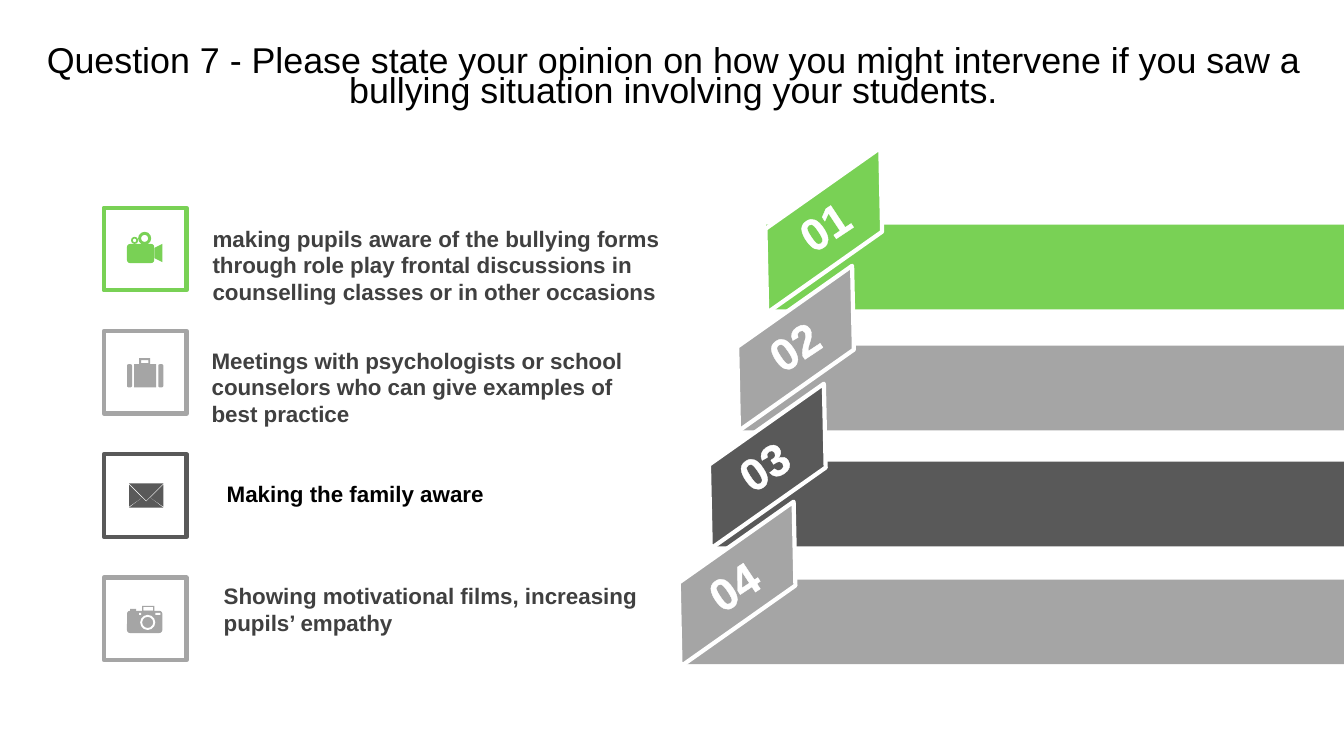
from collections import namedtuple

from lxml.etree import SubElement
from pptx import Presentation
from pptx.dml.color import RGBColor
from pptx.enum.shapes import MSO_SHAPE as Shape
from pptx.enum.text import MSO_ANCHOR as Anchor, PP_ALIGN as Align
from pptx.oxml.ns import qn
from pptx.util import Inches, Pt

Box = namedtuple("Box", "left top width height")
Answer = namedtuple("Answer", "wording color text_color text_box wraps bar_left bar_top tag_left icon")

WIDTH, HEIGHT = 13.33, 7.5
GREEN, GRAY, DARK, WHITE, BLACK, INK = "79D155", "A5A5A5", "595959", "FFFFFF", "000000", "404040"
ICON_GRID = 82

QUESTION = ("Question 7 - Please state your opinion on how you might intervene "
            "if you saw a bullying situation involving your students.")
ANSWERS = [
    Answer("making pupils aware of the bullying forms through role play frontal discussions "
           "in counselling classes or in other occasions",
           GREEN, INK, Box(2.01, 2.18, 5.19, 0.91), True, 7.6, 2.23, 7.24, "film"),
    Answer("Meetings with psychologists or school counselors who can give examples of best practice",
           GRAY, INK, Box(2, 3.39, 4.48, 0.91), True, 7.32, 3.43, 6.96, "suitcase"),
    Answer("Making the family aware",
           DARK, BLACK, Box(2.15, 4.71, 2.79, 0.37), False, 7.06, 4.58, 6.68, "envelope"),
    Answer("Showing motivational films, increasing pupils’ empathy",
           GRAY, INK, Box(2.12, 5.73, 4.48, 0.64), True, 6.75, 5.75, 6.38, "camera"),
]

ICON_PARTS = {
    "film": [(Shape.ROUNDED_RECTANGLE, (23, 36, 27, 19), 0.16, False),
             (Shape.DONUT, (34, 24, 13, 13), 0.23, False),
             (Shape.DONUT, (27, 29, 7, 7), 0.25, False)],
    "suitcase": [(Shape.RECTANGLE, (30, 33, 22, 23), None, False),
                 (Shape.ROUNDED_RECTANGLE, (23, 33, 5, 23), 0.3, False),
                 (Shape.ROUNDED_RECTANGLE, (54, 33, 5, 23), 0.3, False),
                 (Shape.FRAME, (35, 27, 11, 7), 0.27, False)],
    "camera": [(Shape.ROUNDED_RECTANGLE, (23, 33, 35, 22), 0.13, False),
               (Shape.FRAME, (38, 28, 12, 6), 0.2, False),
               (Shape.RECTANGLE, (26, 31, 6, 3), None, False),
               (Shape.DONUT, (36, 37, 15, 15), 0.13, True),
               (Shape.RECTANGLE, (35, 35, 2, 2), None, True),
               (Shape.RECTANGLE, (51, 35, 5, 2), None, True)],
}
ICON_OUTLINES = {
    "film": [[(50, 40), (58, 36), (58, 54), (50, 50)]],
    "envelope": [[(46, 43), (59, 53), (25, 53), (38, 43), (42, 47)],
                 [(59, 30), (59, 52), (46, 43)],
                 [(25, 30), (38, 43), (25, 52)],
                 [(25, 29), (59, 29), (42, 46)]],
}


def paint(shape, fill, line=None):
    """Give a shape a flat fill and an optional 3 pt line."""
    shape.shadow.inherit = False
    shape.fill.solid()
    shape.fill.fore_color.rgb = RGBColor.from_string(fill)
    if line:
        shape.line.color.rgb = RGBColor.from_string(line)
        shape.line.width = Pt(3)
    else:
        shape.line.fill.background()


def add_preset(page, kind, box, fill, line=None, adjustment=None):
    """Add a painted preset shape."""
    shape = page.shapes.add_shape(kind, *map(Inches, box))
    if adjustment is not None:
        shape.adjustments[0] = adjustment
    paint(shape, fill, line)
    return shape


def add_text(page, box, wording, size, color, bold=False, align=Align.LEFT, wraps=True):
    """Add a text box holding one paragraph."""
    holder = page.shapes.add_textbox(*map(Inches, box))
    holder.text_frame.text = wording
    holder.text_frame.word_wrap = wraps
    para = holder.text_frame.paragraphs[0]
    para.alignment = align
    font = para.runs[0].font
    font.name, font.size, font.bold = "Arial", Pt(size), bold
    font.color.rgb = RGBColor.from_string(color)
    return holder


def add_title(page, box):
    """Place the question, tightly spaced and centred."""
    frame = add_text(page, box, QUESTION, 25.6, BLACK, align=Align.CENTER).text_frame
    frame.vertical_anchor = Anchor.MIDDLE
    frame.margin_top = Inches(0.1)
    frame.paragraphs[0].line_spacing = 0.7
    frame.paragraphs[0].space_before = Pt(10)


def add_icon(page, box, name, color):
    """Draw a framed icon on a grid laid over the box."""
    add_preset(page, Shape.RECTANGLE, box, WHITE, color)
    cell = box.width / ICON_GRID
    for kind, (left, top, width, height), adjustment, cut_out in ICON_PARTS.get(name, []):
        part = Box(box.left + left * cell, box.top + top * cell, width * cell, height * cell)
        add_preset(page, kind, part, WHITE if cut_out else color, adjustment=adjustment)
    for points in ICON_OUTLINES.get(name, []):
        corners = [(Inches(box.left + x * cell), Inches(box.top + y * cell)) for x, y in points]
        builder = page.shapes.build_freeform(*corners[0])
        builder.add_line_segments(corners[1:], close=True)
        paint(builder.convert_to_shape(), color)


def add_answers(page, box):
    """List the answers down the box, each with its icon."""
    pitch = (box.height - box.width) / (len(ANSWERS) - 1)
    for row, answer in enumerate(ANSWERS):
        square = Box(box.left, box.top + row * pitch, box.width, box.width)
        add_icon(page, square, answer.icon, answer.color)
        add_text(page, answer.text_box, answer.wording, 16, answer.text_color,
                 bold=True, wraps=answer.wraps)


def add_number(page, box, wording):
    """Place a slanted white number with a thin white outline."""
    holder = add_text(page, box, wording, 32, WHITE, bold=True, align=Align.CENTER)
    holder.rotation = 326.5
    properties = holder.text_frame.paragraphs[0].runs[0].font._element
    outline = SubElement(properties, qn("a:ln"), w=str(Pt(1)))
    fill = SubElement(outline, qn("a:solidFill"))
    SubElement(fill, qn("a:srgbClr"), val=WHITE)
    properties.insert(0, outline)


def add_ribbons(page, first_tag, first_number):
    """Draw the bars to the right edge, then the folded tags and their numbers."""
    for answer in ANSWERS:
        bar = Box(answer.bar_left, answer.bar_top, WIDTH - answer.bar_left, 0.84)
        add_preset(page, Shape.RECTANGLE, bar, answer.color)
    for row, answer in reversed(list(enumerate(ANSWERS))):
        box = first_tag._replace(left=answer.tag_left, top=first_tag.top + row * 1.17)
        tag = add_preset(page, Shape.PARALLELOGRAM, box, answer.color, WHITE, 0.674)
        tag.rotation = 144.8
    for row in range(len(ANSWERS)):
        box = first_number._replace(left=first_number.left - row * 0.3,
                                    top=first_number.top + row * 1.19)
        add_number(page, box, f"{row + 1:02}")


def main():
    """Build the slide and save it."""
    deck = Presentation()
    deck.slide_width, deck.slide_height = Inches(WIDTH), Inches(HEIGHT)
    page = deck.slides.add_slide(deck.slide_layouts[6])
    add_title(page, Box(0.35, 0.37, 12.66, 0.79))
    add_ribbons(page, Box(7.24, 1.94, 1.86, 0.69), Box(7.65, 1.92, 1.05, 0.64))
    add_answers(page, Box(1.03, 2.06, 0.82, 4.49))
    deck.save("out.pptx")


if __name__ == "__main__":
    main()
